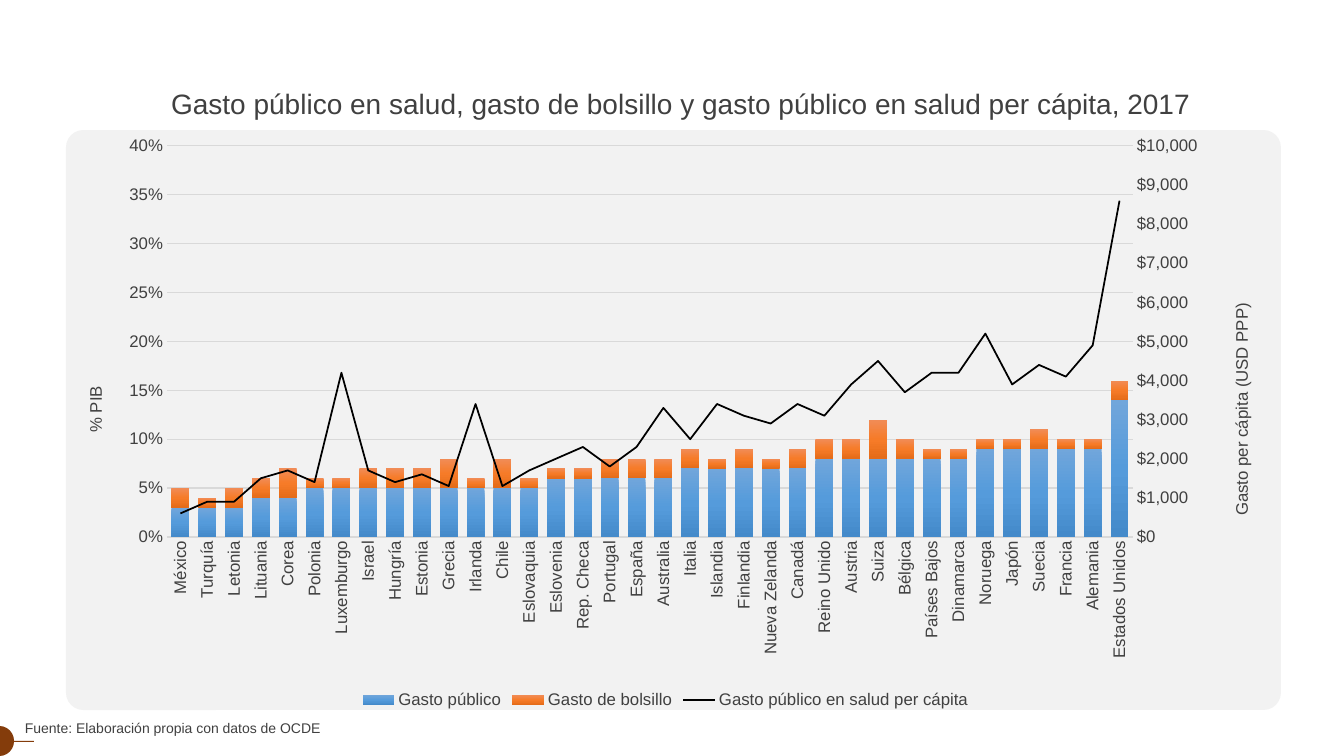
import copy
import pptx
import pptx.chart.axis
import pptx.chart.data
import pptx.dml.color
import pptx.enum.chart
import pptx.enum.shapes
import pptx.enum.text
import pptx.oxml
import pptx.oxml.ns
import pptx.util

# Content
HEADING = "Gasto público en salud, gasto de bolsillo y gasto público en salud per cápita, 2017"
SOURCE = "Fuente: Elaboración propia con datos de OCDE"
COUNTRIES = [
    "México", "Turquía", "Letonia", "Lituania", "Corea", "Polonia", "Luxemburgo", "Israel", "Hungría",
    "Estonia", "Grecia", "Irlanda", "Chile", "Eslovaquia", "Eslovenia", "Rep. Checa", "Portugal", "España",
    "Australia", "Italia", "Islandia", "Finlandia", "Nueva Zelanda", "Canadá", "Reino Unido", "Austria",
    "Suiza", "Bélgica", "Países Bajos", "Dinamarca", "Noruega", "Japón", "Suecia", "Francia", "Alemania",
    "Estados Unidos"]
SPENDING = {
    "Gasto público": [
        0.03, 0.03, 0.03, 0.04, 0.04, 0.05, 0.05, 0.05, 0.05, 0.05, 0.05, 0.05,
        0.05, 0.05, 0.06, 0.06, 0.06, 0.06, 0.06, 0.07, 0.07, 0.07, 0.07, 0.07,
        0.08, 0.08, 0.08, 0.08, 0.08, 0.08, 0.09, 0.09, 0.09, 0.09, 0.09, 0.14],
    "Gasto de bolsillo": [
        0.02, 0.01, 0.02, 0.02, 0.03, 0.01, 0.01, 0.02, 0.02, 0.02, 0.03, 0.01,
        0.03, 0.01, 0.01, 0.01, 0.02, 0.02, 0.02, 0.02, 0.01, 0.02, 0.01, 0.02,
        0.02, 0.02, 0.04, 0.02, 0.01, 0.01, 0.01, 0.01, 0.02, 0.01, 0.01, 0.02],
    "Gasto público en salud per cápita": [
        600, 900, 900, 1500, 1700, 1400, 4200, 1700, 1400, 1600, 1300, 3400,
        1300, 1700, 2000, 2300, 1800, 2300, 3300, 2500, 3400, 3100, 2900, 3400,
        3100, 3900, 4500, 3700, 4200, 4200, 5200, 3900, 4400, 4100, 4900, 8600]}
COLORS = {"text": "404040", "panel": "F2F2F2", "grid": "D9D9D9", "line": "000000", "accent": "843C0B"}
GRADIENTS = [("71A6DB", "559BDB", "448ACA"), ("F18C57", "F67B28", "E56C19")]

# Boxes in px: left, top, width, height
SLIDE = (1344, 756)
PANEL = (66, 130, 1215, 580)
CHART = (58, 134, 1215, 579)
PLOT = (167, 146, 966, 391)
HEADING_BOX = (161, 81, 1047, 44)
SOURCE_BOX = (15, 715, 318, 27)
RULE = (2, 741, 32, 1)
HALF_DISC = (-15, 726, 29, 30)
# Axis title, its left and top in px, and the scale of the axis
AXES = [
    ("% PIB", (82, 383), dict(minimum_scale=0, maximum_scale=0.4, major_unit=0.05), "0%"),
    ("Gasto per cápita (USD PPP)", (1228, 300),
     dict(minimum_scale=0, maximum_scale=10000, major_unit=1000), '"$"#,##0')]
EMU_PER_PX = 914400 / 100.8


def emu(box):
    return [pptx.util.Emu(round(length * EMU_PER_PX)) for length in box]


def rgb(name):
    return pptx.dml.color.RGBColor.from_string(COLORS[name])


def style_font(font, size):
    for key, value in dict(name="Arial", size=pptx.util.Pt(size), bold=False).items():
        setattr(font, key, value)
    font.color.rgb = rgb("text")


def style_line(line, color, width):
    line.color.rgb = rgb(color)
    line.width = pptx.util.Pt(width)


def xml(body):
    tag_end = min(body.index(c) for c in " />" if c in body)
    return pptx.oxml.parse_xml(body[:tag_end] + " " + pptx.oxml.ns.nsdecls("a", "c") + body[tag_end:])


def manual_layout(left, top, width=None, height=None):
    x, y = (left - CHART[0]) / CHART[2], (top - CHART[1]) / CHART[3]
    inner = '<c:layoutTarget val="inner"/>' if width else ""
    size = f'<c:w val="{width / CHART[2]:.4f}"/><c:h val="{height / CHART[3]:.4f}"/>' if width else ""
    return xml(f'<c:layout><c:manualLayout>{inner}<c:xMode val="edge"/><c:yMode val="edge"/>'
               f'<c:x val="{x:.4f}"/><c:y val="{y:.4f}"/>{size}</c:manualLayout></c:layout>')


def replace_layout(parent, layout, index):
    for old in parent.xpath("c:layout"):
        parent.remove(old)
    parent.insert(index, layout)


def write(shape, box, text, size):
    shape.left, shape.top, shape.width, shape.height = emu(box)
    frame = shape.text_frame
    frame.text = text
    frame.word_wrap = False
    frame.auto_size = pptx.enum.text.MSO_AUTO_SIZE.SHAPE_TO_FIT_TEXT
    frame.vertical_anchor = pptx.enum.text.MSO_ANCHOR.TOP
    frame.paragraphs[0].alignment = pptx.enum.text.PP_ALIGN.LEFT
    style_font(frame.paragraphs[0].runs[0].font, size)


def add_block(shapes, kind, box, color):
    block = shapes.add_shape(kind, *emu(box))
    block.shadow.inherit = False
    block.fill.solid()
    block.fill.fore_color.rgb = rgb(color)
    block.line.fill.background()
    return block


def add_spending_chart(shapes):
    data = pptx.chart.data.CategoryChartData()
    data.categories = COUNTRIES
    for name, values in SPENDING.items():
        data.add_series(name, values)
    chart = shapes.add_chart(pptx.enum.chart.XL_CHART_TYPE.COLUMN_STACKED, *emu(CHART), data).chart
    chart.has_title = False
    style_font(chart.font, 12)
    chart.has_legend = True
    chart.legend.position = pptx.enum.chart.XL_LEGEND_POSITION.BOTTOM
    chart.legend.include_in_layout = False
    style_font(chart.legend.font, 12)

    # Columns
    columns = chart.plots[0]
    for key, value in dict(gap_width=50, overlap=100, vary_by_categories=False).items():
        setattr(columns, key, value)
    *column_series, per_capita = columns.series
    for series, shades in zip(column_series, GRADIENTS):
        series.format.fill.solid()
    style_line(per_capita.format.line, "line", 1.25)
    plot_area = chart.element.xpath("c:chart/c:plotArea")[0]
    for solid, shades in zip(plot_area.xpath("c:barChart/c:ser/c:spPr/a:solidFill"), GRADIENTS):
        stops = "".join(f'<a:gs pos="{i * 50000}"><a:srgbClr val="{shade}"/></a:gs>'
                        for i, shade in enumerate(shades))
        gradient = f'<a:gradFill><a:gsLst>{stops}</a:gsLst><a:lin ang="5400000" scaled="0"/></a:gradFill>'
        solid.getparent().replace(solid, xml(gradient))

    # Per-capita line on a second pair of axes
    bar_chart = plot_area.xpath("c:barChart")[0]
    line_chart = xml('<c:lineChart><c:grouping val="standard"/><c:varyColors val="0"/>'
                     '<c:marker val="1"/><c:axId val="5001"/><c:axId val="5002"/></c:lineChart>')
    line_series = bar_chart.xpath("c:ser")[-1]
    for flag in line_series.xpath("c:invertIfNegative"):
        line_series.remove(flag)
    line_chart.insert(2, line_series)
    bar_chart.addnext(line_chart)
    left_axis = plot_area.xpath("c:valAx")[0]
    right_axis = copy.deepcopy(left_axis)
    hidden_axis = copy.deepcopy(plot_area.xpath("c:catAx")[0])
    left_axis.addnext(right_axis)
    right_axis.addnext(hidden_axis)
    for axis, values in ((right_axis, dict(axId=5002, crossAx=5001, axPos="r", crosses="max")),
                         (hidden_axis, dict(axId=5001, crossAx=5002, delete=1))):
        for tag, value in values.items():
            axis.xpath(f"c:{tag}")[0].set("val", str(value))
    line = chart.plots[1].series[0]
    line.smooth = False
    line.marker.style = pptx.enum.chart.XL_MARKER_STYLE.NONE

    # Axes
    no_tick = pptx.enum.chart.XL_TICK_MARK.NONE
    category_axis = chart.category_axis
    value_axes = [pptx.chart.axis.ValueAxis(left_axis), pptx.chart.axis.ValueAxis(right_axis)]
    for axis in [category_axis] + value_axes:
        axis.major_tick_mark = axis.minor_tick_mark = no_tick
        axis.has_major_gridlines = False
        style_font(axis.tick_labels.font, 12)
    style_line(category_axis.format.line, "grid", 1)
    for axis, (title, corner, scale, number_format) in zip(value_axes, AXES):
        for key, value in scale.items():
            setattr(axis, key, value)
        axis.tick_labels.number_format = number_format
        axis.tick_labels.number_format_is_linked = False
        axis.format.line.fill.background()
        axis.axis_title.text_frame.text = title
        style_font(axis.axis_title.text_frame.paragraphs[0].runs[0].font, 12)
    style_line(value_axes[0].major_gridlines.format.line, "grid", 0.75)
    for element, (_, corner, _, _) in zip((left_axis, right_axis), AXES):
        replace_layout(element.xpath("c:title")[0], manual_layout(*corner), 1)
    for body in plot_area.xpath("c:valAx/c:title//a:bodyPr | c:catAx/c:txPr/a:bodyPr"):
        body.set("rot", "-5400000")
        body.set("vert", "horz")
    replace_layout(plot_area, manual_layout(*PLOT), 0)


def main():
    deck = pptx.Presentation()
    deck.slide_width, deck.slide_height = emu(SLIDE)
    slide = deck.slides.add_slide(deck.slide_layouts[5])
    shapes = slide.shapes
    preset = pptx.enum.shapes.MSO_SHAPE
    panel = add_block(shapes, preset.ROUNDED_RECTANGLE, PANEL, "panel")
    panel.adjustments[0] = 0.03
    add_spending_chart(shapes)
    write(shapes.add_textbox(*emu(SOURCE_BOX)), SOURCE_BOX, SOURCE, 10)

    # Corner ornament
    ornament = shapes.add_group_shape().shapes
    add_block(ornament, preset.RECTANGLE, RULE, "accent")
    half_disc = add_block(ornament, preset.PIE, HALF_DISC, "accent")
    half_disc.rotation = 180
    half_disc.adjustments[0], half_disc.adjustments[1] = 54, 162

    write(shapes.title, HEADING_BOX, HEADING, 20)
    deck.save("out.pptx")


if __name__ == "__main__":
    main()
